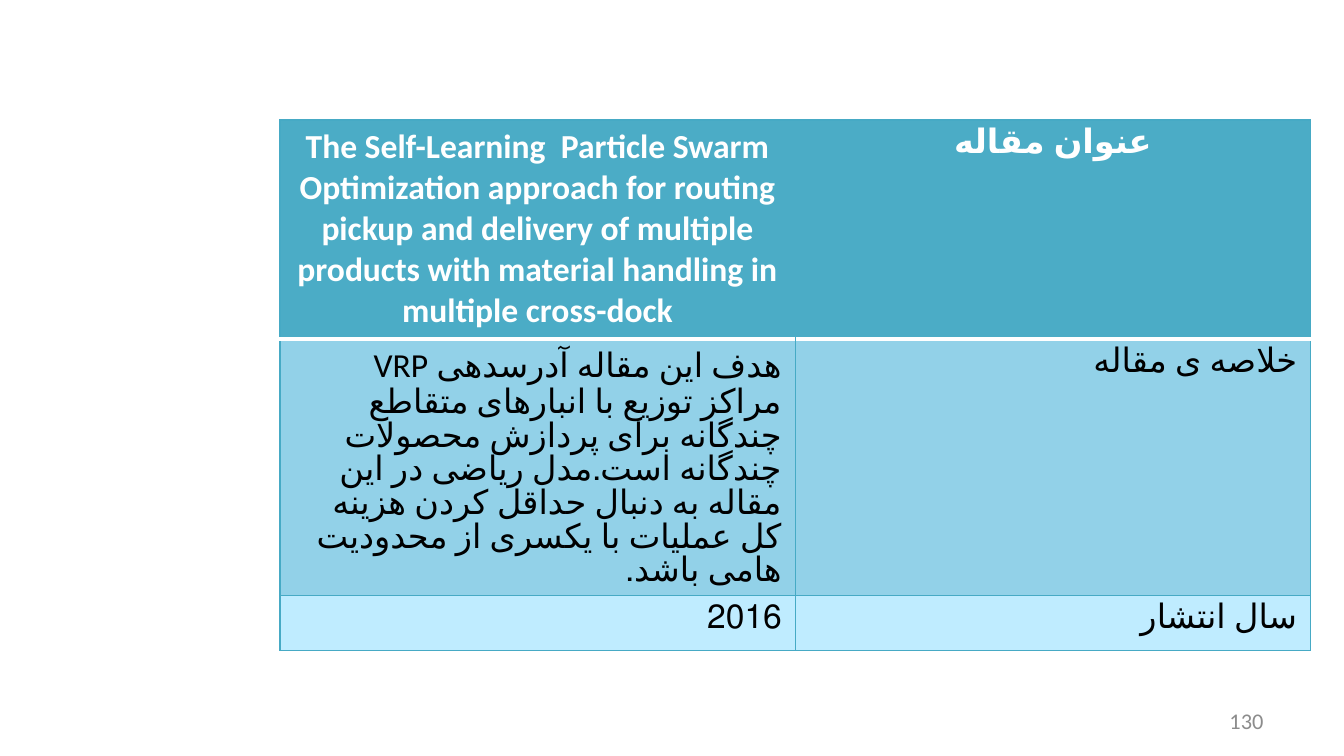
import pptx
import pptx.dml.color
import pptx.enum.lang
import pptx.enum.text
import pptx.oxml
import pptx.oxml.ns
import pptx.util
from pptx.dml.color import RGBColor
from pptx.util import Cm

WHITE = RGBColor(0xFF, 0xFF, 0xFF)
BLACK = RGBColor(0x00, 0x00, 0x00)
GRAY = RGBColor(0x8C, 0x8C, 0x8C)
TEAL = RGBColor(0x4B, 0xAC, 0xC6)
BORDER = RGBColor(0x46, 0xAA, 0xC5)
BAND_DARK = RGBColor(0x92, 0xD1, 0xE8)
BAND_LIGHT = RGBColor(0xBF, 0xEC, 0xFF)

CENTER = pptx.enum.text.PP_ALIGN.CENTER
RIGHT = pptx.enum.text.PP_ALIGN.RIGHT

COL_WIDTH = Cm(9.74)
ROW_HEIGHTS = [Cm(4.14), Cm(4.83), Cm(1.04)]
ROW_FILLS = [TEAL, BAND_DARK, BAND_LIGHT]
ROWS = [
    ("The Self-Learning  Particle Swarm Optimization approach for routing pickup "
     "and delivery of multiple products with material handling in multiple cross-dock",
     "عنوان مقاله"),
    ("هدف این مقاله آدرسدهی VRP مراکز توزیع با انبارهای متقاطع چندگانه برای پردازش "
     "محصولات چندگانه است.مدل ریاضی در این مقاله به دنبال حداقل کردن هزینه کل "
     "عملیات با یکسری از محدودیت هامی باشد.",
     "خلاصه ی مقاله"),
    ("2016", "سال انتشار"),
]


def write(tf, text, size, color, align, bold=False, rtl=True):
    p = tf.paragraphs[0]
    p.alignment = align
    r = p.add_run()
    r.text = text
    if rtl:
        p._p.get_or_add_pPr().set("rtl", "1")
        r.font.language_id = pptx.enum.lang.MSO_LANGUAGE_ID.FARSI
    r.font.name = "Calibri"
    r.font.size = pptx.util.Pt(size)
    r.font.bold = bold
    r.font.color.rgb = color


def set_border(cell, side, color, width=0.75):
    """Draw one cell edge; a color of None leaves it empty."""
    paint = (f'<a:solidFill><a:srgbClr val="{color}"/></a:solidFill>'
             if color is not None else "<a:noFill/>")
    cell._tc.get_or_add_tcPr().append(pptx.oxml.parse_xml(
        f'<a:ln{side} {pptx.oxml.ns.nsdecls("a")} w="{pptx.util.Pt(width)}">'
        f"{paint}</a:ln{side}>"))


def style_borders(cell, row, col):
    for side in "LRTB":
        inner = (side, col) in (("R", 0), ("L", 1))
        if (row, side) in ((0, "B"), (1, "T")):
            set_border(cell, side, WHITE, 2)
        elif row == 0 and inner:
            set_border(cell, side, None)
        else:
            set_border(cell, side, BORDER)


def add_article_table(s):
    table = s.shapes.add_table(len(ROWS), 2, Cm(5.29), Cm(2.27),
                               2 * COL_WIDTH, sum(ROW_HEIGHTS)).table
    for column in table.columns:
        column.width = COL_WIDTH
    for i, texts in enumerate(ROWS):
        table.rows[i].height = ROW_HEIGHTS[i]
        header = i == 0
        for j, text in enumerate(texts):
            cell = table.cell(i, j)
            style_borders(cell, i, j)
            cell.fill.solid()
            cell.fill.fore_color.rgb = ROW_FILLS[i]
            write(cell.text_frame, text, 18, WHITE if header else BLACK,
                  CENTER if header else RIGHT, bold=header,
                  rtl=not (header and j == 0))


def add_page_number(s, text):
    tf = s.shapes.add_textbox(Cm(18.2), Cm(13.24), Cm(5.93), Cm(0.76)).text_frame
    tf.word_wrap = True
    tf.vertical_anchor = pptx.enum.text.MSO_ANCHOR.MIDDLE
    write(tf, text, 12, GRAY, RIGHT, rtl=False)


def main():
    prs = pptx.Presentation()
    prs.slide_width, prs.slide_height = Cm(25.4), Cm(14.29)
    s = prs.slides.add_slide(prs.slide_layouts[6])

    # Article summary
    add_article_table(s)

    # Footer
    add_page_number(s, "130")

    prs.save("out.pptx")


if __name__ == "__main__":
    main()
